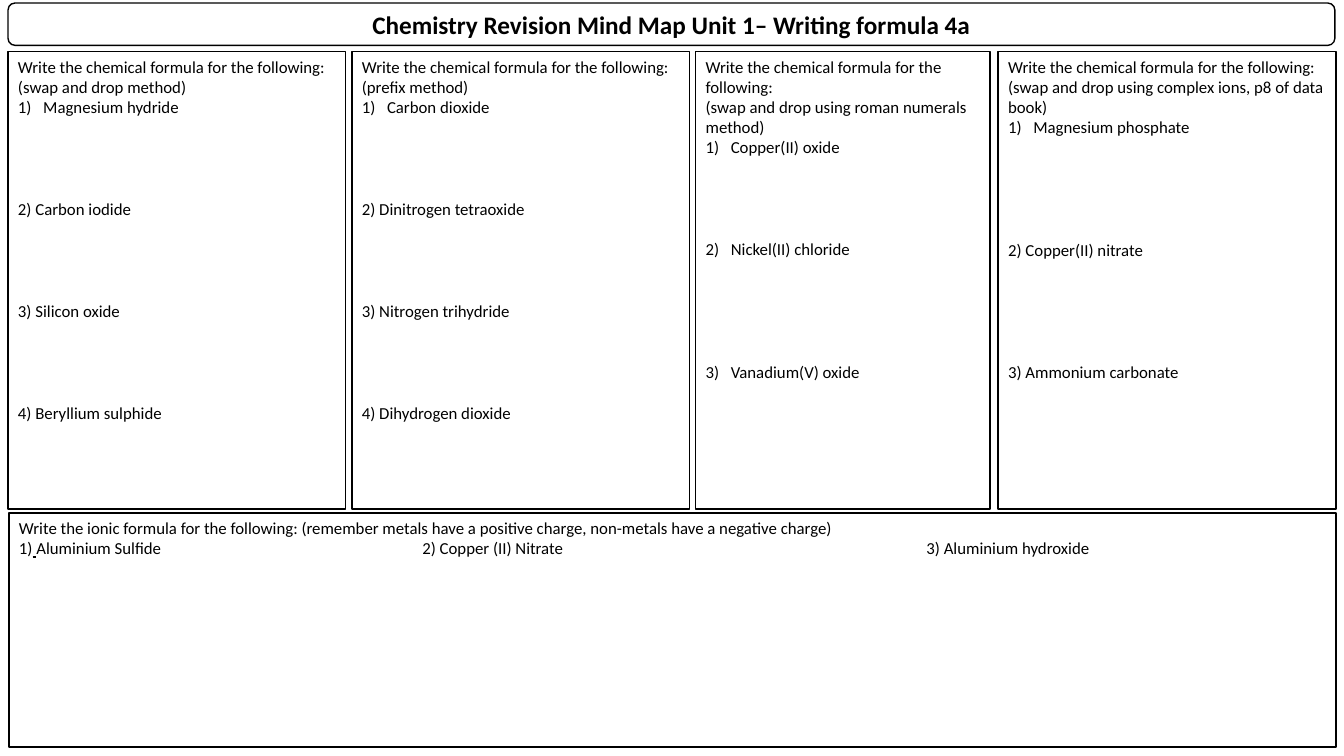
from lxml.etree import SubElement
from pptx import Presentation
from pptx.dml.color import RGBColor
from pptx.enum.shapes import MSO_SHAPE
from pptx.enum.text import MSO_ANCHOR, PP_ALIGN
from pptx.oxml.ns import qn
from pptx.util import Inches, Pt

LINE_HEIGHT = 14.65  # points, one line of 12 pt Calibri


def color(hex_string):
    return RGBColor.from_string(hex_string)


def add_run(paragraph, text, size=12, bold=False, underline=False):
    run = paragraph.add_run()
    run.text = text
    font = run.font
    font.name, font.size = "Calibri", Pt(size)
    font.bold, font.underline = bold, underline
    font.color.rgb = color("000000")


def add_numbering(paragraph):
    properties = paragraph._p.get_or_add_pPr()
    properties.set("marL", str(Inches(0.25)))
    properties.set("indent", str(Inches(-0.25)))
    SubElement(properties, qn("a:buFont"), typeface="+mj-lt")
    SubElement(properties, qn("a:buAutoNum"), type="arabicParenR")


def add_tab_stops(paragraph, *stops):
    tabs = SubElement(paragraph._p.get_or_add_pPr(), qn("a:tabLst"))
    for stop in stops:
        SubElement(tabs, qn("a:tab"), pos=str(Inches(stop)), algn="l")


class Worksheet:
    def __init__(self, slide):
        self.slide = slide

    def box(self, left, top, width, height, kind=MSO_SHAPE.RECTANGLE,
            anchor=MSO_ANCHOR.TOP):
        shape = self.slide.shapes.add_shape(
            kind, Inches(left), Inches(top), Inches(width), Inches(height))
        shape.shadow.inherit = False
        shape.fill.solid()
        shape.fill.fore_color.rgb = color("FFFFFF")
        shape.line.color.rgb = color("000000")
        shape.line.width = Pt(1)
        shape.text_frame.word_wrap = True
        shape.text_frame.vertical_anchor = anchor
        return shape.text_frame

    def paragraph(self, frame, text="", gap=0, numbered=False,
                  align=PP_ALIGN.LEFT, **font):
        paragraph = frame.paragraphs[0]
        if paragraph.runs:
            paragraph = frame.add_paragraph()
        paragraph.alignment = align
        if gap:
            paragraph.space_before = Pt(gap * LINE_HEIGHT)
        if numbered:
            add_numbering(paragraph)
        if text:
            add_run(paragraph, text, **font)
        return paragraph

    def question_column(self, left, width, headings, items):
        frame = self.box(left, 0.51, width, 4.54)
        for heading in headings:
            self.paragraph(frame, heading)
        for text, gap, numbered in items:
            self.paragraph(frame, text, gap=gap, numbered=numbered)


INSTRUCTION = "Write the chemical formula for the following:"

# left, width, headings, items (text, blank lines above, automatic number)
COLUMNS = [
    (0.08, 3.35, [INSTRUCTION + " (swap and drop method)"],
     [("Magnesium hydride", 0, True), ("2) Carbon iodide", 4, False),
      ("3) Silicon oxide", 4, False), ("4) Beryllium sulphide", 4, False)]),
    (3.49, 3.35, [INSTRUCTION, "(prefix method)"],
     [("Carbon dioxide", 0, True), ("2) Dinitrogen tetraoxide", 4, False),
      ("3) Nitrogen trihydride", 4, False),
      ("4) Dihydrogen dioxide", 4, False)]),
    (6.9, 2.92, [INSTRUCTION, "(swap and drop using roman numerals method)"],
     [("Copper(II) oxide", 0, True), ("Nickel(II) chloride", 4, True),
      ("Vanadium(V) oxide", 5, True)]),
    (9.9, 3.35,
     [INSTRUCTION, "(swap and drop using complex ions, p8 of data book)"],
     [("Magnesium phosphate", 0, True), ("2) Copper(II) nitrate", 5, False),
      ("3) Ammonium carbonate", 5, False)]),
]


def main():
    presentation = Presentation()
    presentation.slide_width = Inches(13.33)
    presentation.slide_height = Inches(7.5)
    slide = presentation.slides.add_slide(presentation.slide_layouts[6])
    sheet = Worksheet(slide)

    # Title bar
    title = sheet.box(0.08, 0.03, 13.16, 0.42, MSO_SHAPE.ROUNDED_RECTANGLE,
                      MSO_ANCHOR.MIDDLE)
    sheet.paragraph(title,
                    "Chemistry Revision Mind Map Unit 1– Writing formula 4a",
                    align=PP_ALIGN.CENTER, size=18, bold=True)

    # Chemical formula columns
    for column in COLUMNS:
        sheet.question_column(*column)

    # Ionic formula panel
    ionic = sheet.box(0.09, 5.09, 13.16, 2.32)
    sheet.paragraph(ionic, "Write the ionic formula for the following: "
                    "(remember metals have a positive charge, "
                    "non-metals have a negative charge)")
    questions = sheet.paragraph(ionic)
    add_tab_stops(questions, 4, 9)
    add_run(questions, "1)")
    add_run(questions, " ", underline=True)
    add_run(questions, "Aluminium Sulfide\t2) Copper (II) Nitrate"
            "\t3) Aluminium hydroxide")

    presentation.save("out.pptx")


if __name__ == "__main__":
    main()
